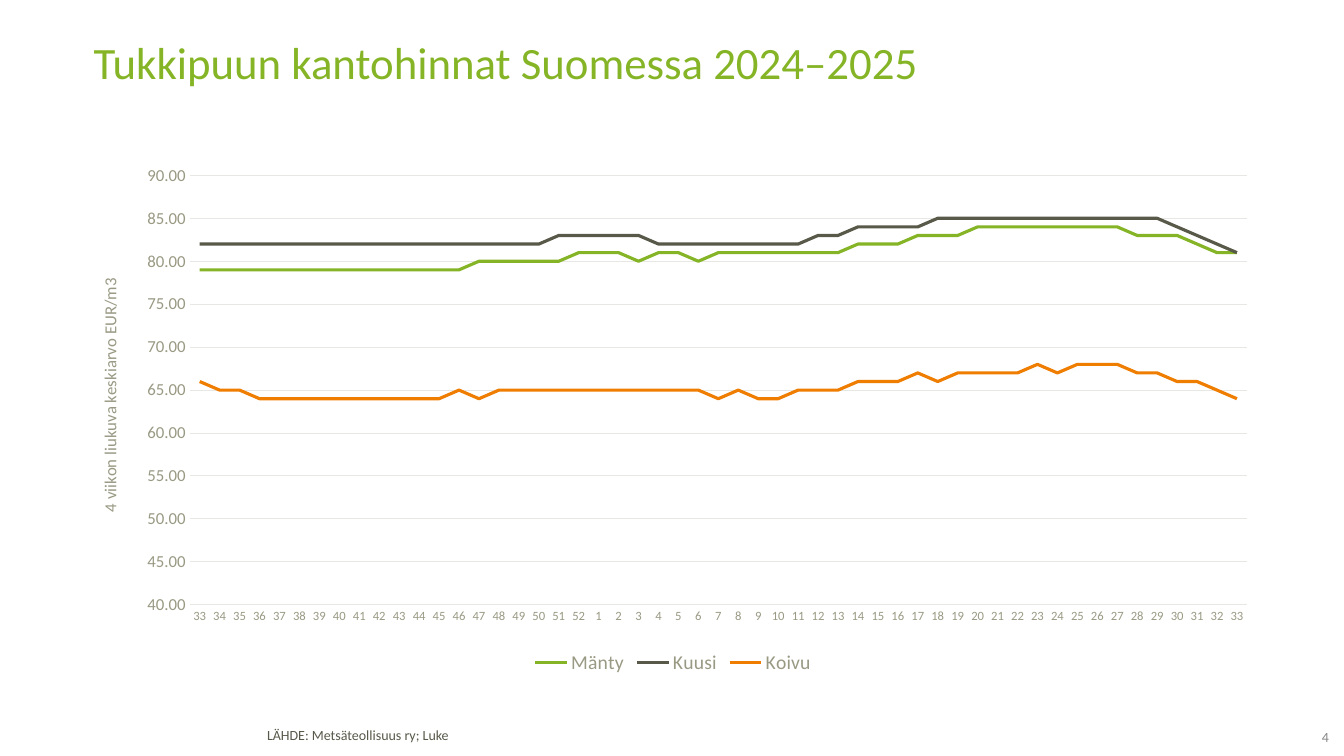
from lxml.etree import SubElement
from pptx import Presentation
from pptx.chart.data import CategoryChartData
from pptx.dml.color import RGBColor
from pptx.enum.chart import XL_CHART_TYPE, XL_LEGEND_POSITION, XL_TICK_MARK
from pptx.enum.text import MSO_ANCHOR, PP_ALIGN
from pptx.oxml.ns import qn
from pptx.util import Inches, Pt

FONT = "Calibri"
GREEN = RGBColor(0x85, 0xB5, 0x26)
DARK = RGBColor(0x59, 0x59, 0x4A)
ORANGE = RGBColor(0xEF, 0x7D, 0x00)
SOURCE_TEXT = RGBColor(0x58, 0x59, 0x4A)
AXIS_TEXT = RGBColor(0x99, 0x99, 0x84)
GRID = RGBColor(0xE7, 0xE7, 0xE3)
GRAY = RGBColor(0x87, 0x87, 0x87)

# Weekly prices, from week 33 of 2024 to week 33 of 2025
WEEKS = [str(week) for week in [*range(33, 53), *range(1, 34)]]
PRICES = {
    "Mänty": (GREEN, [
        79, 79, 79, 79, 79, 79, 79, 79, 79, 79, 79, 79, 79, 79, 80, 80, 80, 80,
        80, 81, 81, 81, 80, 81, 81, 80, 81, 81, 81, 81, 81, 81, 81, 82, 82, 82,
        83, 83, 83, 84, 84, 84, 84, 84, 84, 84, 84, 83, 83, 83, 82, 81, 81]),
    "Kuusi": (DARK, [
        82, 82, 82, 82, 82, 82, 82, 82, 82, 82, 82, 82, 82, 82, 82, 82, 82, 82,
        83, 83, 83, 83, 83, 82, 82, 82, 82, 82, 82, 82, 82, 83, 83, 84, 84, 84,
        84, 85, 85, 85, 85, 85, 85, 85, 85, 85, 85, 85, 85, 84, 83, 82, 81]),
    "Koivu": (ORANGE, [
        66, 65, 65, 64, 64, 64, 64, 64, 64, 64, 64, 64, 64, 65, 64, 65, 65, 65,
        65, 65, 65, 65, 65, 65, 65, 65, 64, 65, 64, 64, 65, 65, 65, 66, 66, 66,
        67, 66, 67, 67, 67, 67, 68, 67, 68, 68, 68, 67, 67, 66, 66, 65, 64]),
}


def style_font(font, size, color):
    font.name = FONT
    font.size = Pt(size)
    font.bold = False
    font.color.rgb = color


def set_layout(element, **settings):
    """Place a chart part by fractions of the chart area."""
    layout = element.find(qn("c:layout"))
    if layout is None:
        layout = SubElement(element, qn("c:layout"))
        element.insert(0, layout)
    manual = SubElement(layout, qn("c:manualLayout"))
    for name, value in settings.items():
        SubElement(manual, qn(f"c:{name}")).set("val", str(value))


deck = Presentation()
deck.slide_width = Inches(13.33)
deck.slide_height = Inches(7.5)
page = deck.slides.add_slide(deck.slide_layouts[6])

# Title, source and page number
texts = [
    ("Tukkipuun kantohinnat Suomessa 2024–2025",
     (0.83, 0.4, 11.69, 0.98), 32, GREEN, 0.8),
    ("LÄHDE: Metsäteollisuus ry; Luke",
     (2.55, 7.18, 7.18, 0.27), 10, SOURCE_TEXT, 0.85),
    ("4", (12.65, 7.24, 0.53, 0.19), 10, GRAY, 1.0),
]
for text, place, size, color, spacing in texts:
    box = page.shapes.add_textbox(*map(Inches, place))
    frame = box.text_frame
    frame.word_wrap = True
    para = frame.paragraphs[0]
    para.text = text
    para.line_spacing = spacing
    style_font(para.font, size, color)

# The page number, added last, sits flush right
frame.vertical_anchor = MSO_ANCHOR.MIDDLE
frame.margin_left = frame.margin_right = frame.margin_top = 0
frame.margin_bottom = Inches(0.04)
para.alignment = PP_ALIGN.RIGHT

# Price chart
data = CategoryChartData(number_format="#,##0.00")
data.categories = WEEKS
for name, (color, values) in PRICES.items():
    data.add_series(name, values)
chart = page.shapes.add_chart(
    XL_CHART_TYPE.LINE, Inches(0.83), Inches(1.57),
    Inches(11.69), Inches(5.16), data).chart
style_font(chart.font, 10, DARK)
chart.has_title = False
plot = chart.plots[0]
plot.vary_by_categories = False
for series in plot.series:
    series.smooth = False
    series.format.line.color.rgb = PRICES[series.name][0]
    series.format.line.width = Pt(2.25)
plot_area = chart.element.find(".//" + qn("c:plotArea"))
set_layout(plot_area, layoutTarget="inner", xMode="edge", yMode="edge",
           x=0.09, y=0.033, w=0.897, h=0.826)

# Axes
week_axis, price_axis = chart.category_axis, chart.value_axis
for axis, size in ((week_axis, 9), (price_axis, 12)):
    axis.major_tick_mark = axis.minor_tick_mark = XL_TICK_MARK.NONE
    style_font(axis.tick_labels.font, size, AXIS_TEXT)
price_axis.minimum_scale = 40
price_axis.maximum_scale = 90
price_axis.major_unit = 5
price_axis.tick_labels.number_format = "#,##0.00"
price_axis.tick_labels.number_format_is_linked = False
price_axis.format.line.fill.background()
for line in (week_axis.format.line, price_axis.major_gridlines.format.line):
    line.color.rgb = GRID
    line.width = Pt(0.75)

# Rotated price axis title
para = price_axis.axis_title.text_frame.paragraphs[0]
para.text = "4 viikon liukuva keskiarvo EUR/m3"
style_font(para.font, 12, AXIS_TEXT)
title = plot_area.find(qn("c:valAx")).find(qn("c:title"))
title.find(".//" + qn("a:bodyPr")).set("rot", "-5400000")
set_layout(title, xMode="edge", yMode="edge", x=0.01, y=0.225)

# Legend
chart.has_legend = True
chart.legend.position = XL_LEGEND_POSITION.BOTTOM
chart.legend.include_in_layout = False
style_font(chart.legend.font, 14, AXIS_TEXT)

deck.save("out.pptx")
